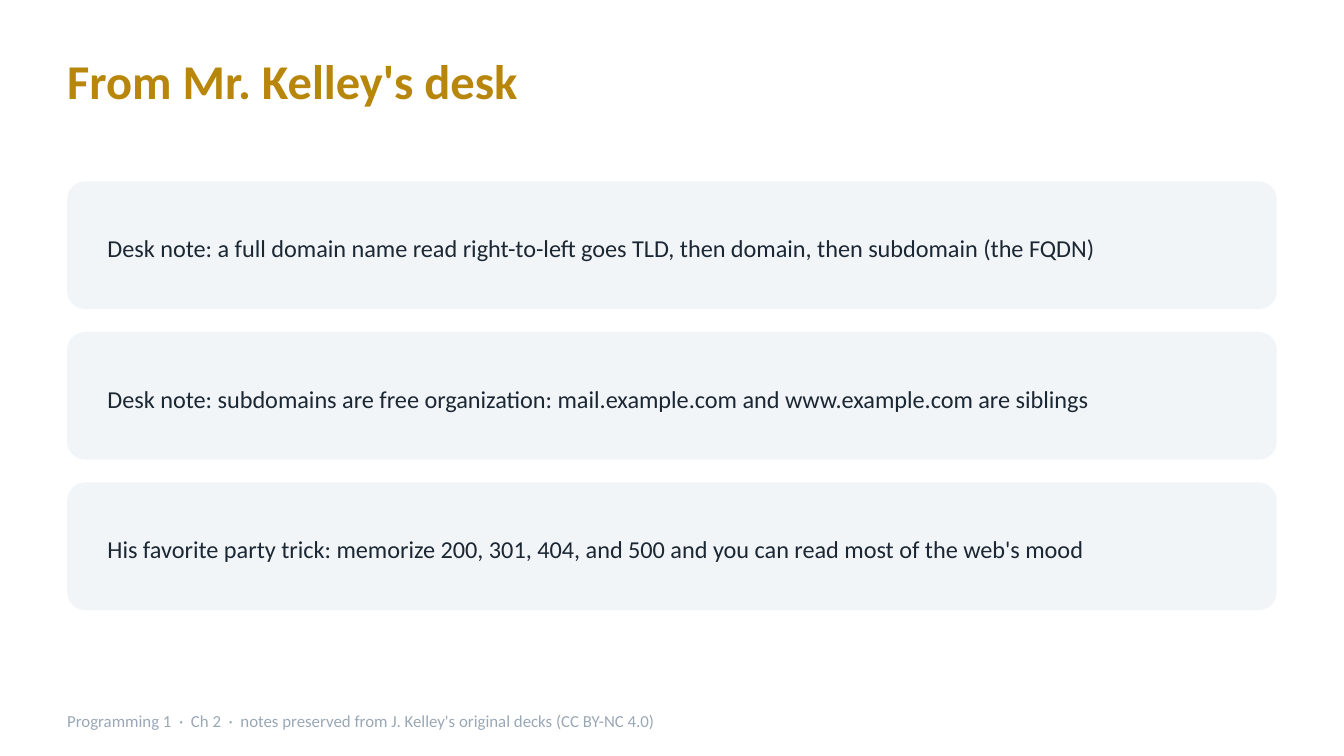
import pptx
import pptx.dml.color
import pptx.enum.shapes
import pptx.enum.text
import pptx.util

GOLD = pptx.dml.color.RGBColor(0xB8, 0x86, 0x0B)
PALE = pptx.dml.color.RGBColor(0xF2, 0xF5, 0xF8)
INK = pptx.dml.color.RGBColor(0x1B, 0x27, 0x33)
GREY = pptx.dml.color.RGBColor(0x9A, 0xA8, 0xB6)

SLIDE_WIDTH = 10
SLIDE_HEIGHT = SLIDE_WIDTH * 9 / 16
MARGIN = 0.05 * SLIDE_WIDTH
CONTENT_WIDTH = SLIDE_WIDTH - 2 * MARGIN
CARD_HEIGHT, CARD_GAP = 0.95, 0.17

DESK_NOTES = [
    "Desk note: a full domain name read right-to-left goes TLD, then domain, then subdomain (the FQDN)",
    "Desk note: subdomains are free organization: mail.example.com and www.example.com are siblings",
    "His favorite party trick: memorize 200, 301, 404, and 500 and you can read most of the web's mood",
]


def inches(box):
    return [pptx.util.Inches(length) for length in box]


def add_text(slide, text, box, size, color, bold=False,
             anchor=pptx.enum.text.MSO_ANCHOR.TOP):
    frame = slide.shapes.add_textbox(*inches(box)).text_frame
    frame.word_wrap = True
    frame.auto_size = pptx.enum.text.MSO_AUTO_SIZE.SHAPE_TO_FIT_TEXT
    frame.vertical_anchor = anchor
    frame.margin_left = frame.margin_right = 0
    frame.margin_top = frame.margin_bottom = 0
    line = frame.paragraphs[0]
    line.space_after = pptx.util.Pt(4)
    words = line.add_run()
    words.text = text
    words.font.name = "Calibri"
    words.font.size = pptx.util.Pt(size)
    words.font.bold = bold
    words.font.color.rgb = color


def add_card(slide, note, box):
    left, top, width, height = box
    # Rounded panel
    panel = slide.shapes.add_shape(
        pptx.enum.shapes.MSO_SHAPE.ROUNDED_RECTANGLE, *inches(box))
    panel.adjustments[0] = 0.14
    panel.shadow.inherit = False
    panel.fill.solid()
    panel.fill.fore_color.rgb = PALE
    panel.line.fill.background()
    # Note, centred vertically
    add_text(slide, note, (left + 0.3, top + 0.12, width - 0.6, height - 0.2),
             size=13, color=INK, anchor=pptx.enum.text.MSO_ANCHOR.MIDDLE)


def add_cards(slide, notes, left, top, width):
    for row, note in enumerate(notes):
        card_top = top + row * (CARD_HEIGHT + CARD_GAP)
        add_card(slide, note, (left, card_top, width, CARD_HEIGHT))


def add_desk_slide(deck):
    slide = deck.slides.add_slide(deck.slide_layouts[6])
    # Title
    add_text(slide, "From Mr. Kelley's desk", (MARGIN, 0.38, CONTENT_WIDTH, 0.6),
             size=26, color=GOLD, bold=True)
    # Desk notes
    add_cards(slide, DESK_NOTES, MARGIN, 1.35, CONTENT_WIDTH)
    # Footer
    add_text(slide,
             "Programming 1  ·  Ch 2  ·  notes preserved from J. Kelley's original decks (CC BY-NC 4.0)",
             (MARGIN, 5.29, 0.8 * SLIDE_WIDTH, 0.25), size=9, color=GREY)


def main():
    deck = pptx.Presentation()
    deck.slide_width, deck.slide_height = inches((SLIDE_WIDTH, SLIDE_HEIGHT))
    add_desk_slide(deck)
    deck.save("out.pptx")


if __name__ == "__main__":
    main()
